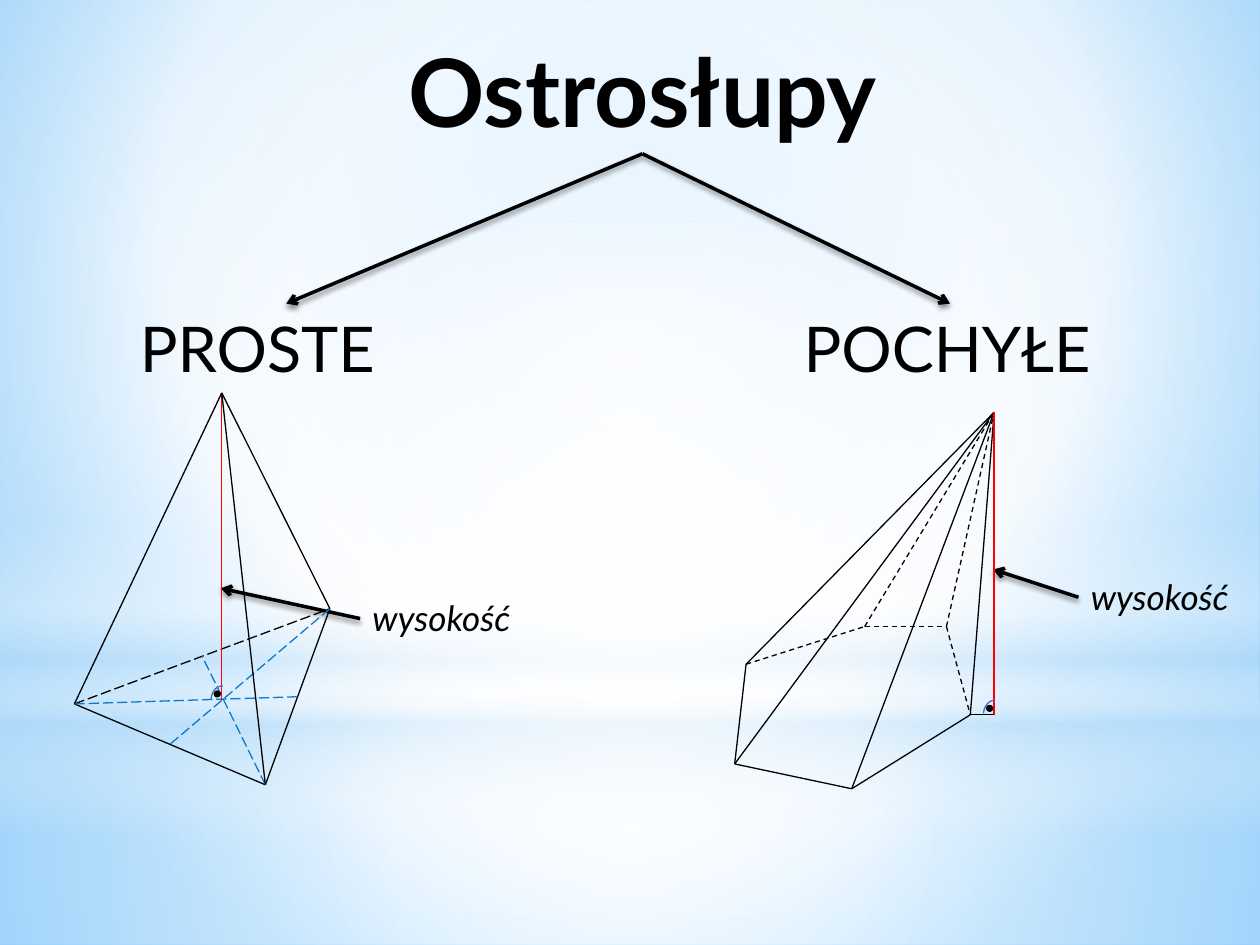
from pptx import Presentation
from pptx.dml.color import RGBColor
from pptx.enum.dml import MSO_LINE
from pptx.enum.shapes import MSO_CONNECTOR, MSO_SHAPE
from pptx.enum.text import MSO_ANCHOR, MSO_AUTO_SIZE, PP_ALIGN
from pptx.oxml import parse_xml
from pptx.oxml.ns import nsdecls, qn
from pptx.util import Cm, Pt

BLACK = RGBColor(0x00, 0x00, 0x00)
RED = RGBColor(0xFF, 0x00, 0x00)
BLUE = RGBColor(0x0D, 0x79, 0xCA)
INDIGO = RGBColor(0x4E, 0x67, 0xC8)
WHITE = RGBColor(0xFF, 0xFF, 0xFF)
PALE = RGBColor(0xB4, 0xDC, 0xFA)
SKY = RGBColor(0x9E, 0xD5, 0xFF)
DEEP_SKY = RGBColor(0x5B, 0xB9, 0xFF)

TITLE_FONT = {"name": "Lato", "size": Pt(54), "bold": True}
HEADING_FONT = {"name": "Lato", "size": Pt(36)}
LABEL_FONT = {"name": "Lato", "size": Pt(20), "italic": True}
CENTRE = (50, 50, 50, 50)
SHADOW = (
    '<a:outerShdw blurRad="40000" dist="23000" dir="5400000" rotWithShape="0">'
    '<a:srgbClr val="000000"><a:alpha val="45000"/></a:srgbClr></a:outerShdw>'
)


def set_gradient(fill, owner, stops, focus=None):
    fill.gradient()
    stop_xml = "".join(
        f'<a:gs pos="{position * 1000}"><a:srgbClr val="{color}">'
        f'<a:alpha val="{opacity * 1000}"/></a:srgbClr></a:gs>'
        for position, color, opacity in stops
    )
    if focus:
        left, top, right, bottom = (side * 1000 for side in focus)
        direction = (
            f'<a:path path="circle"><a:fillToRect l="{left}" t="{top}" '
            f'r="{right}" b="{bottom}"/></a:path>'
        )
    else:
        direction = '<a:lin ang="5400000" scaled="0"/>'
    old = next(owner.iter(qn("a:gradFill")))
    old.getparent().replace(old, parse_xml(
        f'<a:gradFill {nsdecls("a")} rotWithShape="1">'
        f'<a:gsLst>{stop_xml}</a:gsLst>{direction}</a:gradFill>'
    ))


def add_backdrop(slide, title):
    set_gradient(
        slide.background.fill, slide.element,
        [(0, SKY, 100), (60, WHITE, 100), (100, DEEP_SKY, 100)],
        (20, 10, 20, 60),
    )
    rectangle, ellipse = MSO_SHAPE.RECTANGLE, MSO_SHAPE.OVAL
    layers = [
        (rectangle, 14.17, 4.88,
         [(0, WHITE, 91), (37, WHITE, 76), (100, PALE, 79)], CENTRE),
        (rectangle, 0, 14.17,
         [(0, WHITE, 89), (48, WHITE, 62), (100, PALE, 79)], CENTRE),
        (rectangle, 10.46, 6.35,
         [(0, WHITE, 0), (29, WHITE, 30), (45, PALE, 40),
          (55, WHITE, 26), (65, PALE, 60), (100, WHITE, 0)], None),
        (ellipse, 4.45, 14.17, [(0, WHITE, 100), (56, WHITE, 0)], CENTRE),
    ]
    for kind, top, height, stops, focus in layers:
        shape = slide.shapes.add_shape(kind, 0, Cm(top), Cm(25.4), Cm(height))
        shape.shadow.inherit = False
        shape.line.fill.background()
        set_gradient(shape.fill, shape.element, stops, focus)
        title.element.addprevious(shape.element)


def write_text(shape, text, font_format, alignment=PP_ALIGN.LEFT):
    frame = shape.text_frame
    frame.text = text
    frame_format = {
        "word_wrap": True,
        "auto_size": MSO_AUTO_SIZE.SHAPE_TO_FIT_TEXT,
        "vertical_anchor": MSO_ANCHOR.TOP,
    }
    for name, value in frame_format.items():
        setattr(frame, name, value)
    paragraph = frame.paragraphs[0]
    paragraph.alignment = alignment
    font = paragraph.runs[0].font
    for name, value in font_format.items():
        setattr(font, name, value)
    font.color.rgb = BLACK


def add_text(shapes, box, text, font_format):
    text_box = shapes.add_textbox(*map(Cm, box))
    write_text(text_box, text, font_format)
    return text_box


def add_line(shapes, start, end, color=BLACK, width=0.75, dash=None, effect=""):
    connector = shapes.add_connector(
        MSO_CONNECTOR.STRAIGHT, *map(Cm, (*start, *end)))
    connector.line.color.rgb = color
    connector.line.width = Pt(width)
    if dash:
        connector.line.dash_style = dash
    connector.element.spPr.append(parse_xml(
        f'<a:effectLst {nsdecls("a")}>{effect}</a:effectLst>'))
    return connector


def add_arrow(shapes, source, site, tip=(0, 0)):
    arrow = add_line(shapes, (0, 0), tip, width=2, effect=SHADOW)
    arrow.begin_connect(source, site)
    arrow.line._get_or_add_ln().append(
        parse_xml(f'<a:tailEnd {nsdecls("a")} type="arrow"/>'))
    return arrow


def add_right_angle(shapes, foot):
    x, y = foot
    arc = shapes.add_shape(
        MSO_SHAPE.ARC, Cm(x - 0.28), Cm(y - 0.23), Cm(0.56), Cm(0.43))
    arc.rotation = 274.8
    arc.fill.background()
    dot = shapes.add_shape(
        MSO_SHAPE.OVAL, Cm(x - 0.14), Cm(y - 0.18), Cm(0.1), Cm(0.1))
    dot.fill.solid()
    dot.fill.fore_color.rgb = BLACK
    for shape, color, width in ((arc, INDIGO, 0.75), (dot, BLACK, 1.25)):
        shape.shadow.inherit = False
        shape.line.color.rgb = color
        shape.line.width = Pt(width)


def add_pyramid(slide, box, points, edges, label_at, tip):
    left, top = box
    shapes = slide.shapes.add_group_shape().shapes

    def place(point):
        return left + point[0], top + point[1]

    label = add_text(shapes, (*place(label_at), 3.4, 1.12), "wysokość", LABEL_FONT)
    add_arrow(shapes, label, 1, place(tip))
    for names, color, dash in edges:
        for pair in names.split():
            start, end = (place(points[name]) for name in pair.split("-"))
            add_line(shapes, start, end, color, dash=dash)
    add_right_angle(shapes, place(points["foot"]))


def add_right_pyramid(slide, box):
    points = {
        "apex": (2.97, 0), "foot": (2.97, 6.2),
        "left": (0, 6.27), "front": (3.85, 7.9), "right": (5.15, 4.35),
    }
    for first, second in (("front", "right"), ("left", "front"), ("left", "right")):
        points[f"{first}_{second}"] = tuple(
            (a + b) / 2 for a, b in zip(points[first], points[second]))
    edges = [
        ("right-front front-left", BLACK, None),
        ("left-right", BLACK, MSO_LINE.LONG_DASH),
        ("left-front_right right-left_front front-left_right",
         BLUE, MSO_LINE.LONG_DASH),
        ("foot-apex", RED, None),
        ("left-apex right-apex front-apex", BLACK, None),
    ]
    add_pyramid(slide, box, points, edges, (5.76, 3.99), (2.95, 3.94))


def add_oblique_pyramid(slide, box):
    points = {
        "apex": (5.23, 0), "foot": (5.23, 6.1), "right": (4.75, 6.1),
        "corner": (0, 7.09), "front": (2.36, 7.59), "left": (0.23, 5.08),
        "back": (2.62, 4.32), "rear": (4.27, 4.32),
    }
    edges = [
        ("corner-front corner-left front-right", BLACK, None),
        ("left-back back-rear rear-right back-apex rear-apex",
         BLACK, MSO_LINE.DASH),
        ("corner-apex left-apex front-apex right-apex", BLACK, None),
        ("apex-foot", RED, None),
        ("right-foot", BLACK, None),
    ]
    add_pyramid(slide, box, points, edges, (6.93, 3.17), (5.21, 3.17))


def add_headings(slide, title, top):
    for text, left in (("PROSTE", 2.57), ("POCHYŁE", 15.95)):
        heading = add_text(
            slide.shapes, (left, top, 6.4, 1.8), text, HEADING_FONT)
        add_arrow(slide.shapes, title, 2).end_connect(heading, 0)


def main():
    presentation = Presentation()
    presentation.slide_width, presentation.slide_height = Cm(25.4), Cm(19.05)
    slide = presentation.slides.add_slide(presentation.slide_layouts[5])
    title = slide.shapes.title
    title_box = {"left": 4.72, "top": 0.53, "width": 16.46, "height": 2.57}
    for name, value in title_box.items():
        setattr(title, name, Cm(value))
    write_text(title, "Ostrosłupy", TITLE_FONT, PP_ALIGN.CENTER)
    add_backdrop(slide, title)
    add_headings(slide, title, 6.12)
    add_oblique_pyramid(slide, (14.81, 8.31))
    add_right_pyramid(slide, (1.5, 7.92))
    presentation.save("out.pptx")


if __name__ == "__main__":
    main()
